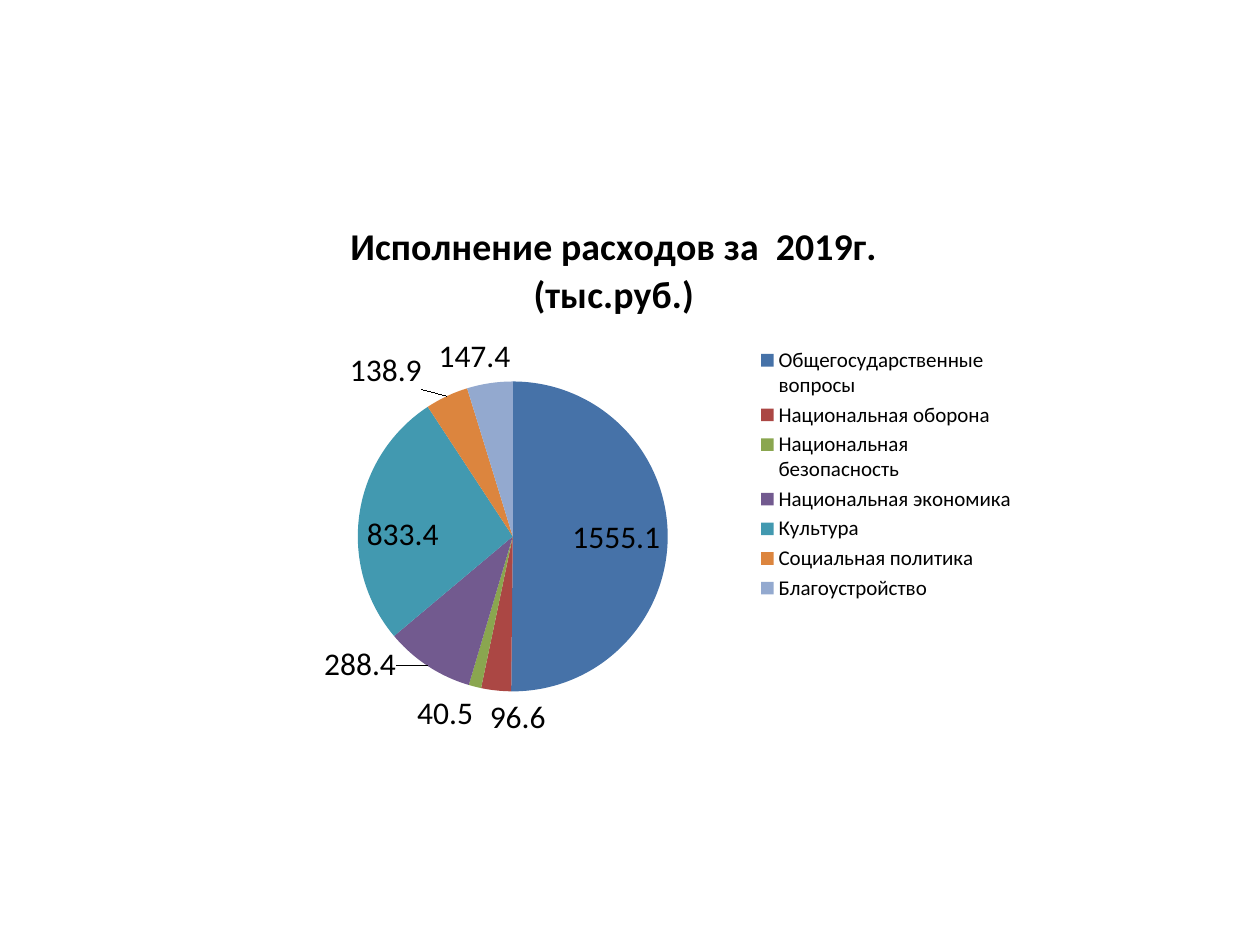
from lxml.etree import SubElement
from pptx import Presentation
from pptx.chart.data import CategoryChartData
from pptx.dml.color import RGBColor
from pptx.enum.chart import (XL_CHART_TYPE as ChartType, XL_LABEL_POSITION as LabelPosition,
                             XL_LEGEND_POSITION as LegendPosition)
from pptx.oxml.ns import qn
from pptx.util import Emu, Pt

PX = 914400 // 126
TITLE = "Исполнение расходов за  2019г. (тыс.руб.)"
COLORS = {"text": "000000", "blue": "4672A8", "red": "AB4744", "green": "8AA64F",
          "purple": "725A8F", "teal": "4299B0", "orange": "DC853E", "pale": "93A9CF"}
INSIDE, OUTSIDE = LabelPosition.INSIDE_END, LabelPosition.OUTSIDE_END
# Category, value, colour, label position, label shift in px
EXPENSES = [
    ("Общегосударственные вопросы", 1555.1, "blue", INSIDE, None),
    ("Национальная оборона", 96.6, "red", OUTSIDE, (50, 0)),
    ("Национальная безопасность", 40.5, "green", OUTSIDE, None),
    ("Национальная экономика", 288.4, "purple", OUTSIDE, (-28, -27)),
    ("Культура", 833.4, "teal", INSIDE, None),
    ("Социальная политика", 138.9, "orange", OUTSIDE, (-22, 0)),
    ("Благоустройство", 147.4, "pale", OUTSIDE, (22, 0)),
]
# Left, top, width, height in px
CHART = (194, 195, 840, 559)
PIE = (358, 381, 310, 311)
LEGEND = (755, 343, 262, 262)


def color(name):
    return RGBColor.from_string(COLORS[name])


def style_font(font, size, bold=False):
    font.name, font.size, font.bold = "Calibri", Pt(size), bold
    font.color.rgb = color("text")


def add_layout(layout, settings):
    """Fill a c:layout element with a manual layout."""
    manual = SubElement(layout, qn("c:manualLayout"))
    for tag, value in settings.items():
        SubElement(manual, qn(f"c:{tag}")).set("val", str(value))


def place(layout, box, inner=False):
    """Fix a box, given in slide px, as fractions of the chart."""
    left, top, width, height = CHART
    settings = {"layoutTarget": "inner"} if inner else {}
    settings.update(xMode="edge", yMode="edge",
                    x=round((box[0] - left) / width, 3), y=round((box[1] - top) / height, 3),
                    w=round(box[2] / width, 3), h=round(box[3] / height, 3))
    add_layout(layout, settings)


def new_layout(parent, after):
    layout = parent.makeelement(qn("c:layout"))
    parent.find(qn(after)).addnext(layout)
    return layout


presentation = Presentation()
presentation.slide_width, presentation.slide_height = Emu(1260 * PX), Emu(945 * PX)
slide = presentation.slides.add_slide(presentation.slide_layouts[6])

data = CategoryChartData()
data.categories = [row[0] for row in EXPENSES]
data.add_series("Series 1", [row[1] for row in EXPENSES])
chart = slide.shapes.add_chart(ChartType.PIE, *(Emu(n * PX) for n in CHART), data).chart
style_font(chart.font, 18)

chart.has_title = True
title = chart.chart_title.text_frame
title.text = TITLE
style_font(title.paragraphs[0].font, 21.6, bold=True)
chart.chart_title.include_in_layout = False

chart.has_legend = True
chart.legend.position = LegendPosition.RIGHT
chart.legend.include_in_layout = False
style_font(chart.legend.font, 12)

plot = chart.plots[0]
plot.vary_by_categories = True
series = plot.series[0]
series.data_labels.show_value = True
style_font(series.data_labels.font, 18)
for index, (_, _, fill_color, position, shift) in enumerate(EXPENSES):
    point = series.points[index]
    point.format.fill.solid()
    point.format.fill.fore_color.rgb = color(fill_color)
    label = point.data_label
    style_font(label.font, 18)
    label.position = position
    if shift:
        element = series.data_labels._element.xpath(f"c:dLbl[c:idx/@val='{index}']")[0]
        add_layout(new_layout(element, "c:idx"),
                   {"x": round(shift[0] / CHART[2], 3), "y": round(shift[1] / CHART[3], 3)})

plot_area = chart._chartSpace.chart.plotArea
for old in plot_area.findall(qn("c:layout")):
    plot_area.remove(old)
pie_layout = plot_area.makeelement(qn("c:layout"))
plot_area.insert(0, pie_layout)
place(pie_layout, PIE, inner=True)

legend = chart.legend._element
for old in legend.findall(qn("c:layout")):
    legend.remove(old)
place(new_layout(legend, "c:legendPos"), LEGEND)

presentation.save("out.pptx")
